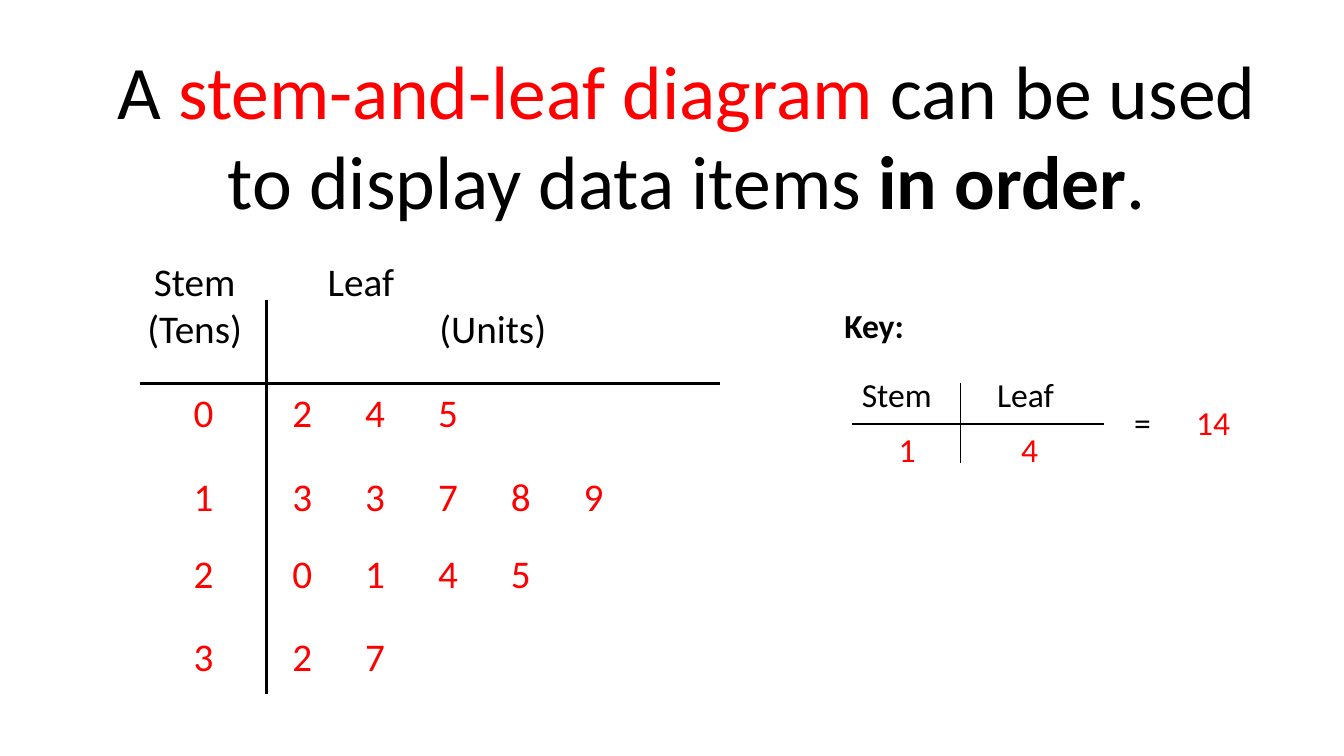
from lxml import etree
from pptx import Presentation
from pptx.dml.color import RGBColor
from pptx.enum.shapes import MSO_CONNECTOR
from pptx.enum.text import PP_ALIGN
from pptx.oxml.ns import qn
from pptx.util import Pt

STRAIGHT = MSO_CONNECTOR.STRAIGHT
LEFT, CENTER = PP_ALIGN.LEFT, PP_ALIGN.CENTER
BLACK, RED = "000000", "FF0000"

prs = Presentation()
prs.slide_width, prs.slide_height = Pt(960), Pt(540)
s = prs.slides.add_slide(prs.slide_layouts[6])


def add_text(x, y, w, h, runs, size, align=CENTER):
    """Add a one-paragraph box from (text, colour, bold) runs; return its text frame."""
    tf = s.shapes.add_textbox(Pt(x), Pt(y), Pt(w), Pt(h)).text_frame
    tf.word_wrap = True
    p = tf.paragraphs[0]
    p.alignment = align
    p.font.name, p.font.size = "Calibri", Pt(size)
    for text, color, bold in runs:
        r = p.add_run()
        r.text = text
        r.font.color.rgb = RGBColor.from_string(color)
        r.font.bold = bold
    return tf


def add_line(x1, y1, x2, y2, width):
    line = s.shapes.add_connector(STRAIGHT, Pt(x1), Pt(y1), Pt(x2), Pt(y2))
    line.line.color.rgb = RGBColor.from_string(BLACK)
    line.line.width = Pt(width)
    etree.SubElement(line._element.spPr, qn("a:effectLst"))


# Title
add_text(54, 27.5, 873, 138, [
    ("A ", BLACK, False),
    ("stem-and-leaf diagram ", RED, False),
    ("can be used to display data items ", BLACK, False),
    ("in order", BLACK, True),
    (".", BLACK, False),
], 54)

# Main diagram
STEM_LEFT, LEAF_LEFT, LEAF_STEP = 100, 190, 52
add_line(190.5, 214, 190.5, 495.5, 2.25)
add_line(STEM_LEFT, 274, 514, 274, 2.25)
add_text(87, 180.5, 104, 95, [("Stem (Tens)", BLACK, False)], 28)

tf = add_text(LEAF_LEFT, 180.5, 324, 95, [("Leaf", BLACK, False)], 28, LEFT)
tf.paragraphs[0]._p.get_or_add_pPr().set("marL", str(Pt(37)))
p = tf.add_paragraph()
p.text = "(Units)"
p.alignment = CENTER
p.font.name, p.font.size = "Calibri", Pt(28)
p.font.color.rgb = RGBColor.from_string(BLACK)

rows = [
    (273.5, "0", "245"),
    (334, "1", "33789"),
    (388.5, "2", "0145"),
    (448, "3", "27"),
]
for y, stem, leaves in rows:
    add_text(STEM_LEFT, y, 91, 52.5, [(stem, RED, False)], 28)
    for i, leaf in enumerate(leaves):
        add_text(LEAF_LEFT + i * LEAF_STEP, y, LEAF_STEP, 52.5,
                 [(leaf, RED, False)], 28)

# Key
key_texts = [
    (596, 214, 151, "Key:", BLACK, True, LEFT),
    (608.5, 263.5, 81, "Stem", BLACK, False, LEFT),
    (677.5, 263.5, 110, "Leaf", BLACK, False, CENTER),
    (615.5, 303, 65, "1", RED, False, CENTER),
    (680.5, 303, 110, "4", RED, False, CENTER),
    (803, 283.5, 36, "=", BLACK, False, LEFT),
    (834, 283.5, 65, "14", RED, False, CENTER),
]
for x, y, w, text, color, bold, align in key_texts:
    add_text(x, y, w, 44.5, [(text, color, bold)], 24, align)
add_line(608.5, 303, 788.5, 303, 1)
add_line(686, 273.5, 686, 331, 1)

prs.save("out.pptx")
